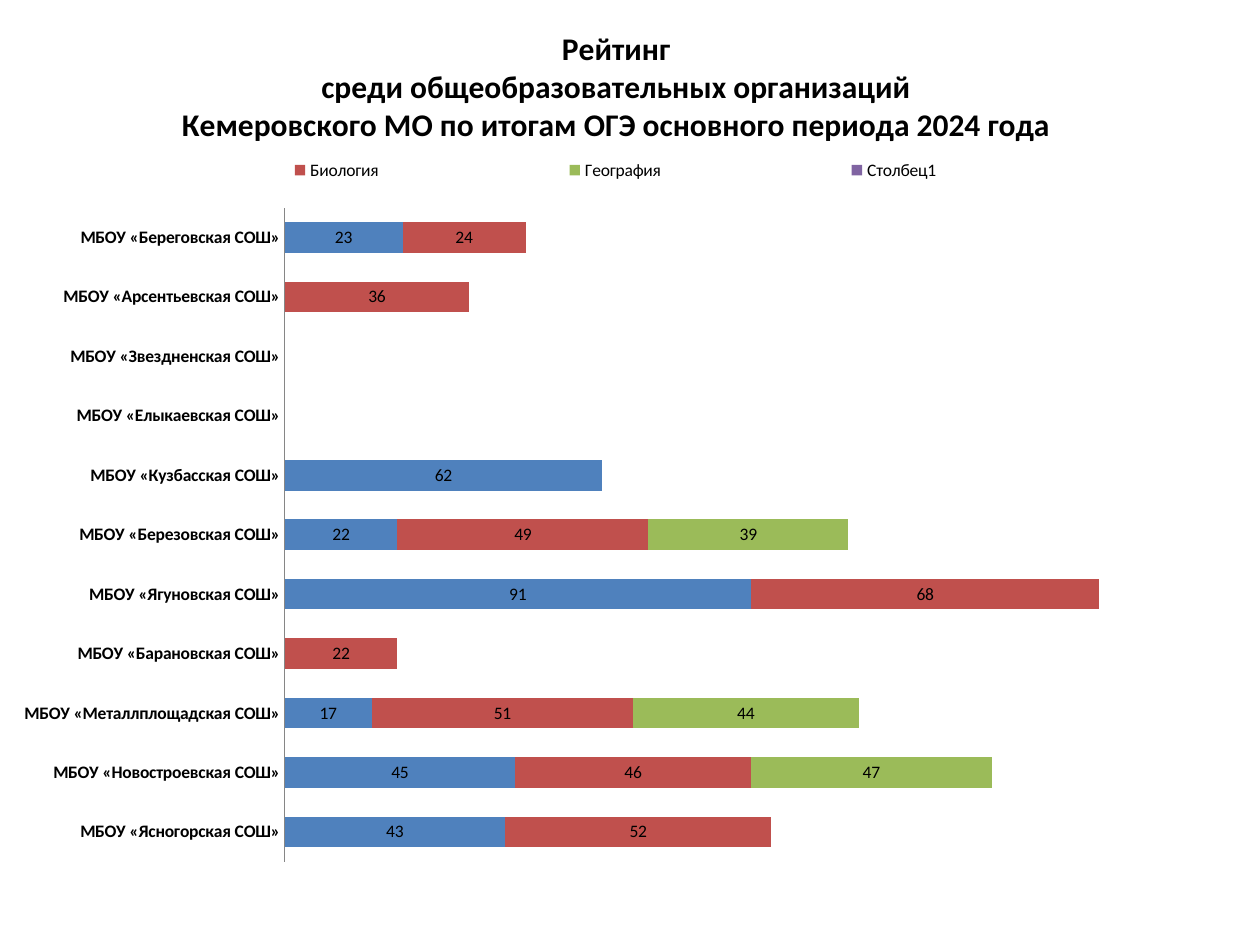
from dataclasses import dataclass
from typing import NamedTuple, Optional

from pptx import Presentation
from pptx.chart.chart import Chart
from pptx.chart.data import CategoryChartData
from pptx.dml.color import RGBColor
from pptx.enum.chart import (XL_CHART_TYPE, XL_LABEL_POSITION,
                             XL_LEGEND_POSITION, XL_TICK_MARK)
from pptx.oxml import parse_xml
from pptx.oxml.ns import nsdecls, qn
from pptx.util import Inches, Pt


@dataclass(frozen=True)
class Theme:
    font: str = "Calibri"
    title_size: Pt = Pt(18)
    text_size: Pt = Pt(10)
    axis_width: Pt = Pt(0.75)
    text: RGBColor = RGBColor(0, 0, 0)
    axis: RGBColor = RGBColor(0x86, 0x86, 0x86)


class Subject(NamedTuple):
    name: str
    color: RGBColor


class School(NamedTuple):
    name: str
    scores: tuple[Optional[int], ...]


class Area(NamedTuple):
    """Part of the chart frame, in inches from its top left corner."""
    left: float
    top: float
    width: float
    height: float


THEME = Theme()
TITLE = """Рейтинг
среди общеобразовательных организаций
Кемеровского МО по итогам ОГЭ основного периода 2024 года"""
SUBJECTS = (
    Subject("Химия", RGBColor(0x4F, 0x81, 0xBD)),
    Subject("Биология", RGBColor(0xC0, 0x50, 0x4D)),
    Subject("География", RGBColor(0x9B, 0xBB, 0x59)),
    Subject("Столбец1", RGBColor(0x80, 0x64, 0xA2)),
)
UNSCORED_SUBJECT = 3
SCHOOLS = (
    School("Ясногорская", (43, 52, None, None)),
    School("Новостроевская", (45, 46, 47, None)),
    School("Металлплощадская", (17, 51, 44, None)),
    School("Барановская", (None, 22, None, None)),
    School("Ягуновская", (91, 68, None, None)),
    School("Березовская", (22, 49, 39, None)),
    School("Кузбасская", (62, None, None, None)),
    School("Елыкаевская", (None, None, None, None)),
    School("Звездненская", (None, None, None, None)),
    School("Арсентьевская", (None, 36, None, None)),
    School("Береговская", (23, 24, None, None)),
)
FRAME = Area(0, 0, 9.78, 6.98)
PLOT_AREA = Area(2.26, 1.65, 7.32, 5.19)
LEGEND_AREA = Area(0.87, 1.21, 8.03, 0.28)


def rating_data() -> CategoryChartData:
    data = CategoryChartData(number_format="General")
    data.categories = [f"МБОУ «{school.name} СОШ»" for school in SCHOOLS]
    for index, subject in enumerate(SUBJECTS):
        data.add_series(subject.name, [school.scores[index] for school in SCHOOLS])
    return data


def place(parent, area: Area, index: int, target: str = "") -> None:
    """Give a chart part a manual layout, inserted at the given child index."""
    for old in parent.findall(qn("c:layout")):
        parent.remove(old)
    layout = parse_xml(
        f'<c:layout {nsdecls("c")}><c:manualLayout>{target}'
        '<c:xMode val="edge"/><c:yMode val="edge"/>'
        f'<c:x val="{area.left / FRAME.width}"/>'
        f'<c:y val="{area.top / FRAME.height}"/>'
        f'<c:w val="{area.width / FRAME.width}"/>'
        f'<c:h val="{area.height / FRAME.height}"/>'
        '</c:manualLayout></c:layout>')
    parent.insert(index, layout)


def format_title(chart: Chart) -> None:
    frame = chart.chart_title.text_frame
    frame.text = TITLE
    for para in frame.paragraphs:
        para.font.name = THEME.font
        para.font.size = THEME.title_size
        para.font.bold = True
        para.font.color.rgb = THEME.text


def format_axes(chart: Chart) -> None:
    schools = chart.category_axis
    schools.major_tick_mark = XL_TICK_MARK.NONE
    schools.minor_tick_mark = XL_TICK_MARK.NONE
    schools.tick_labels.font.bold = True
    schools.tick_labels.font.size = THEME.text_size
    schools.format.line.color.rgb = THEME.axis
    schools.format.line.width = THEME.axis_width
    scores = chart.value_axis
    scores.minimum_scale, scores.maximum_scale = 0, 180
    scores.has_major_gridlines = False
    scores.visible = False


def format_bars(chart: Chart) -> None:
    plot = chart.plots[0]
    plot.gap_width = 95
    plot.overlap = 100
    plot.vary_by_categories = False
    for series, subject in zip(plot.series, SUBJECTS):
        series.format.fill.solid()
        series.format.fill.fore_color.rgb = subject.color
        series.data_labels.show_value = True
        series.data_labels.position = XL_LABEL_POSITION.CENTER


def format_legend(chart: Chart, legend) -> None:
    """Set the legend on top, without an entry for the unscored subject."""
    chart.legend.position = XL_LEGEND_POSITION.TOP
    chart.legend.include_in_layout = False
    place(legend, LEGEND_AREA, 1)
    legend.insert(1, parse_xml(
        f'<c:legendEntry {nsdecls("c")}><c:idx val="{UNSCORED_SUBJECT}"/>'
        '<c:delete val="1"/></c:legendEntry>'))


def add_rating_chart(page) -> None:
    chart = page.shapes.add_chart(
        XL_CHART_TYPE.BAR_STACKED, *map(Inches, FRAME), rating_data()).chart
    chart.font.name = THEME.font
    chart.font.size = THEME.text_size
    chart.font.color.rgb = THEME.text
    format_title(chart)
    format_axes(chart)
    format_bars(chart)
    chart.has_legend = True
    root = chart.element
    format_legend(chart, root.find(f".//{qn('c:legend')}"))
    place(root.find(f".//{qn('c:plotArea')}"), PLOT_AREA, 0,
          '<c:layoutTarget val="inner"/>')


def main() -> None:
    deck = Presentation()
    deck.slide_width, deck.slide_height = Inches(10), Inches(7.5)
    blank_layout = deck.slide_layouts[6]
    add_rating_chart(deck.slides.add_slide(blank_layout))
    deck.save("out.pptx")


if __name__ == "__main__":
    main()
